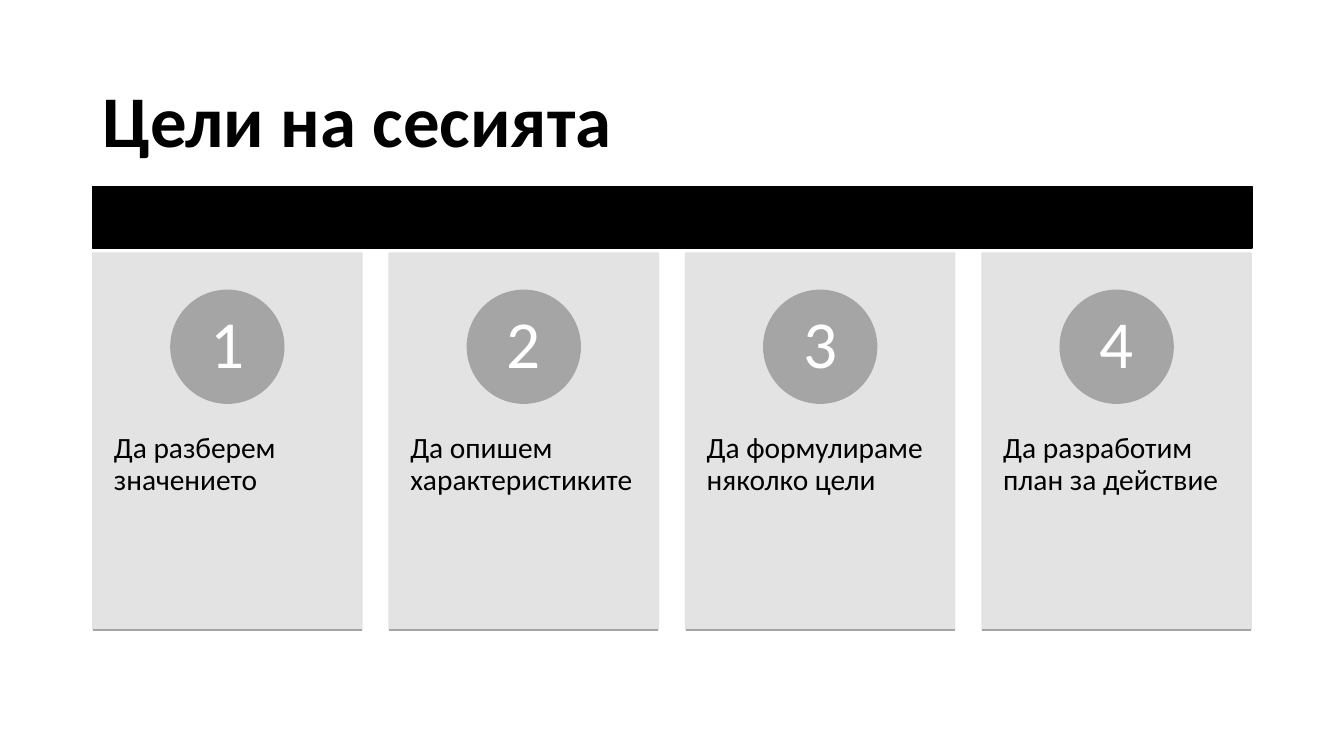
"""Build the session goals slide: a title, a black band and four numbered cards."""
from dataclasses import dataclass

from lxml import etree
from pptx import Presentation
from pptx import util as u
from pptx.dml.color import RGBColor
from pptx.enum import shapes, text
from pptx.oxml import ns

COLORS = {"ink": "000000", "card": "E1E1E1", "accent": "A5A5A5", "white": "FFFFFF"}
FONT = "Calibri"
LEFT, WIDTH = 0.92, 11.5
CARD_TOP, CARD_W, CARD_H, CARD_STEP = 2.51, 2.67, 3.74, 2.94
CIRCLE_TOP, CIRCLE = 2.88, 1.12


@dataclass
class Goal:
    number: int
    wording: str

    @property
    def left(self) -> float:
        return LEFT + (self.number - 1) * CARD_STEP


GOALS = [
    Goal(i, wording)
    for i, wording in enumerate(
        [
            "Да разберем значението",
            "Да опишем характеристиките",
            "Да формулираме няколко цели",
            "Да разработим план за действие",
        ],
        start=1,
    )
]


def rgb(name: str) -> RGBColor:
    return RGBColor.from_string(COLORS[name])


def add_block(slide, kind, left: float, top: float, width: float, height: float, color: str):
    sp = slide.shapes.add_shape(
        kind, u.Inches(left), u.Inches(top), u.Inches(width), u.Inches(height)
    )
    sp.shadow.inherit = False
    sp.fill.solid()
    sp.fill.fore_color.rgb = rgb(color)
    sp.line.color.rgb = rgb(color)
    sp.line.width = u.Pt(1)
    return sp


def set_opacity(sp, percent: int) -> None:
    for clr in sp.element.spPr.iter(ns.qn("a:srgbClr")):
        etree.SubElement(clr, ns.qn("a:alpha"), val=str(percent * 1000))


def write(sp, wording: str, size: float, color: str, align, anchor,
          inset_x: float, inset_y: float, bold: bool = False) -> None:
    tf = sp.text_frame
    tf.word_wrap = True
    tf.auto_size = text.MSO_AUTO_SIZE.NONE
    tf.vertical_anchor = anchor
    tf.margin_left = tf.margin_right = u.Inches(inset_x)
    tf.margin_top = tf.margin_bottom = u.Inches(inset_y)
    p = tf.paragraphs[0]
    p.alignment = align
    p.line_spacing = 0.9
    r = p.add_run()
    r.text = wording
    r.font.name = FONT
    r.font.size = u.Pt(size)
    r.font.bold = bold
    r.font.color.rgb = rgb(color)


def add_rule(slide, left: float, top: float, width: float) -> None:
    line = slide.shapes.add_connector(
        shapes.MSO_CONNECTOR.STRAIGHT,
        u.Inches(left), u.Inches(top), u.Inches(left + width), u.Inches(top),
    )
    line.line.color.rgb = rgb("accent")
    line.line.width = u.Pt(1)
    etree.SubElement(line.element.spPr, ns.qn("a:effectLst"))


def add_title(slide, wording: str) -> None:
    sp = slide.shapes.title
    sp.left, sp.top = u.Inches(LEFT), u.Inches(0.61)
    sp.width, sp.height = u.Inches(WIDTH), u.Inches(1.24)
    write(sp, wording, 52, "ink", text.PP_ALIGN.LEFT, text.MSO_ANCHOR.MIDDLE,
          0.1, 0.05, bold=True)


def add_card(slide, goal: Goal) -> None:
    card = add_block(slide, shapes.MSO_SHAPE.RECTANGLE,
                     goal.left, CARD_TOP, CARD_W, CARD_H, "card")
    set_opacity(card, 90)
    caption = slide.shapes.add_textbox(
        u.Inches(goal.left), u.Inches(3.94), u.Inches(CARD_W), u.Inches(2.25)
    )
    write(caption, goal.wording, 21, "ink", text.PP_ALIGN.LEFT, text.MSO_ANCHOR.TOP,
          0.21, 0.36)
    circle = add_block(slide, shapes.MSO_SHAPE.OVAL,
                       goal.left + (CARD_W - CIRCLE) / 2, CIRCLE_TOP, CIRCLE, CIRCLE, "accent")
    write(circle, str(goal.number), 48, "white", text.PP_ALIGN.CENTER,
          text.MSO_ANCHOR.MIDDLE, 0.09, 0.01)
    add_rule(slide, goal.left, CARD_TOP + CARD_H, CARD_W)


def main() -> None:
    prs = Presentation()
    prs.slide_width, prs.slide_height = u.Inches(13.33), u.Inches(7.5)
    slide = prs.slides.add_slide(prs.slide_layouts.get_by_name("Title Only"))
    add_title(slide, "Цели на сесията")
    for goal in GOALS:
        add_card(slide, goal)
    add_block(slide, shapes.MSO_SHAPE.RECTANGLE, LEFT, 1.85, WIDTH, 0.61, "ink")
    prs.save("out.pptx")


if __name__ == "__main__":
    main()
